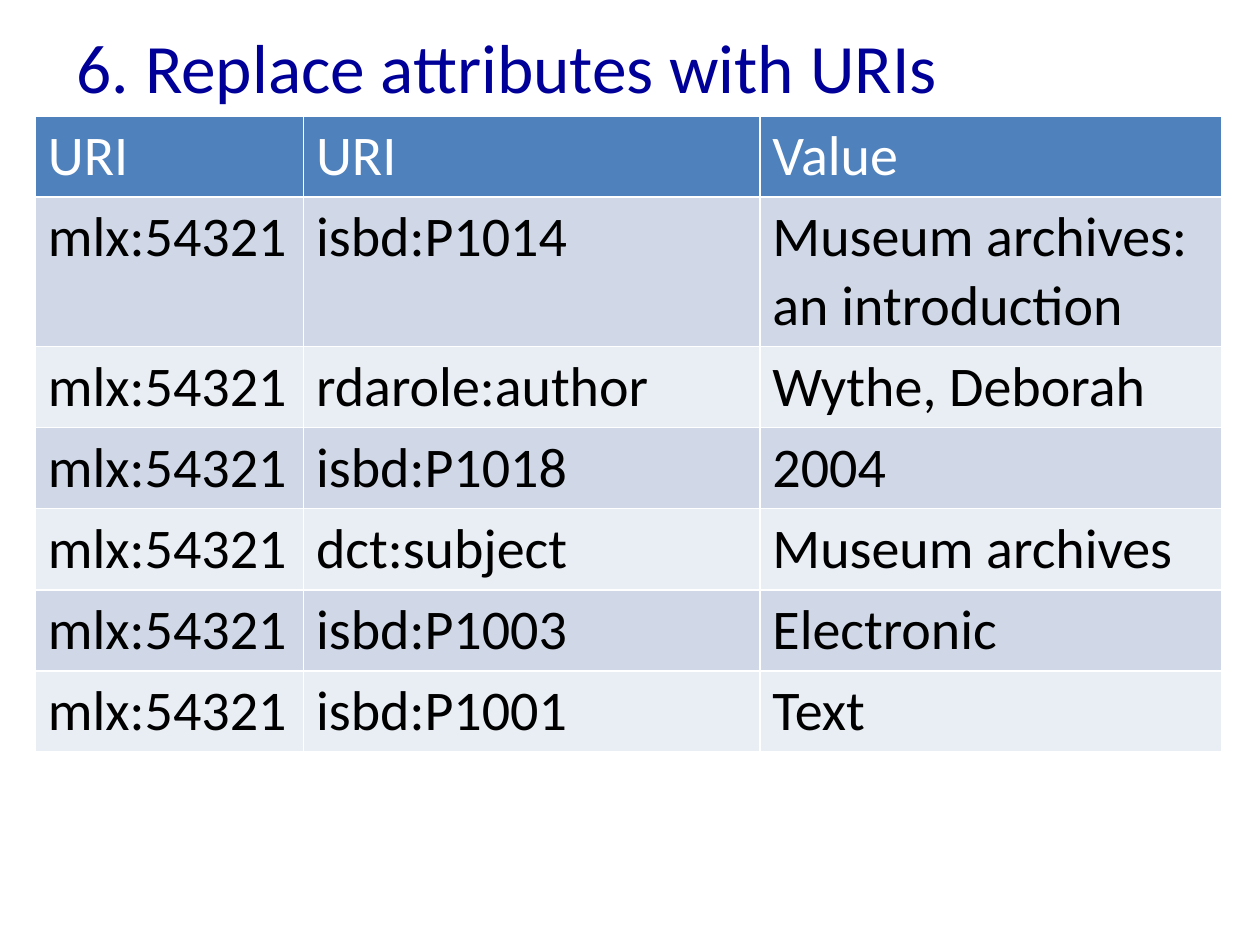
from pptx import Presentation
from pptx.dml.color import RGBColor
from pptx.enum.text import MSO_ANCHOR, PP_ALIGN
from pptx.util import Pt

LEFT, MIDDLE = PP_ALIGN.LEFT, MSO_ANCHOR.MIDDLE

TITLE = "6. Replace attributes with URIs"
HEAD = ("URI", "URI", "Value")
ITEM = "mlx:54321"
FACTS = [
    ("isbd:P1014", "Museum archives: an introduction"),
    ("rdarole:author", "Wythe, Deborah"),
    ("isbd:P1018", "2004"),
    ("dct:subject", "Museum archives"),
    ("isbd:P1003", "Electronic"),
    ("isbd:P1001", "Text"),
]
WIDTHS = (153.2, 260.8, 264.2)
ROW_H = 29.2

THEME = {
    "font": "Calibri",
    "title": (39.6, "000099"),
    "head": (32, "FFFFFF"),
    "body": (32, "000000"),
    "head_fill": "4F81BD",
    "bands": ("D0D8E8", "E9EDF4"),
}


def style(para, role):
    size, color = THEME[role]
    font = para.font
    font.name, font.size, font.bold = THEME["font"], Pt(size), False
    font.color.rgb = RGBColor.from_string(color)


def add_title(slide):
    title = slide.shapes.title
    title.left, title.top = Pt(36.7), Pt(9.4)
    title.width, title.height = Pt(648), Pt(56.9)
    frame = title.text_frame
    frame.text = TITLE
    frame.vertical_anchor = MIDDLE
    para = frame.paragraphs[0]
    para.alignment = LEFT
    style(para, "title")


def add_facts(slide):
    rows = [HEAD] + [(ITEM, *fact) for fact in FACTS]
    table = slide.shapes.add_table(
        len(rows), len(HEAD), Pt(20.2), Pt(66.2),
        Pt(sum(WIDTHS)), Pt(ROW_H * len(rows))).table
    for col, width in zip(table.columns, WIDTHS):
        col.width = Pt(width)
    for r, texts in enumerate(rows):
        role = "body" if r else "head"
        fill = THEME["bands"][(r - 1) % 2] if r else THEME["head_fill"]
        for c, text in enumerate(texts):
            cell = table.cell(r, c)
            cell.text = text
            cell.fill.solid()
            cell.fill.fore_color.rgb = RGBColor.from_string(fill)
            style(cell.text_frame.paragraphs[0], role)


def main():
    deck = Presentation()
    deck.slide_width, deck.slide_height = Pt(720), Pt(540)
    slide = deck.slides.add_slide(deck.slide_layouts[5])
    add_title(slide)
    add_facts(slide)
    deck.save("out.pptx")


if __name__ == "__main__":
    main()
